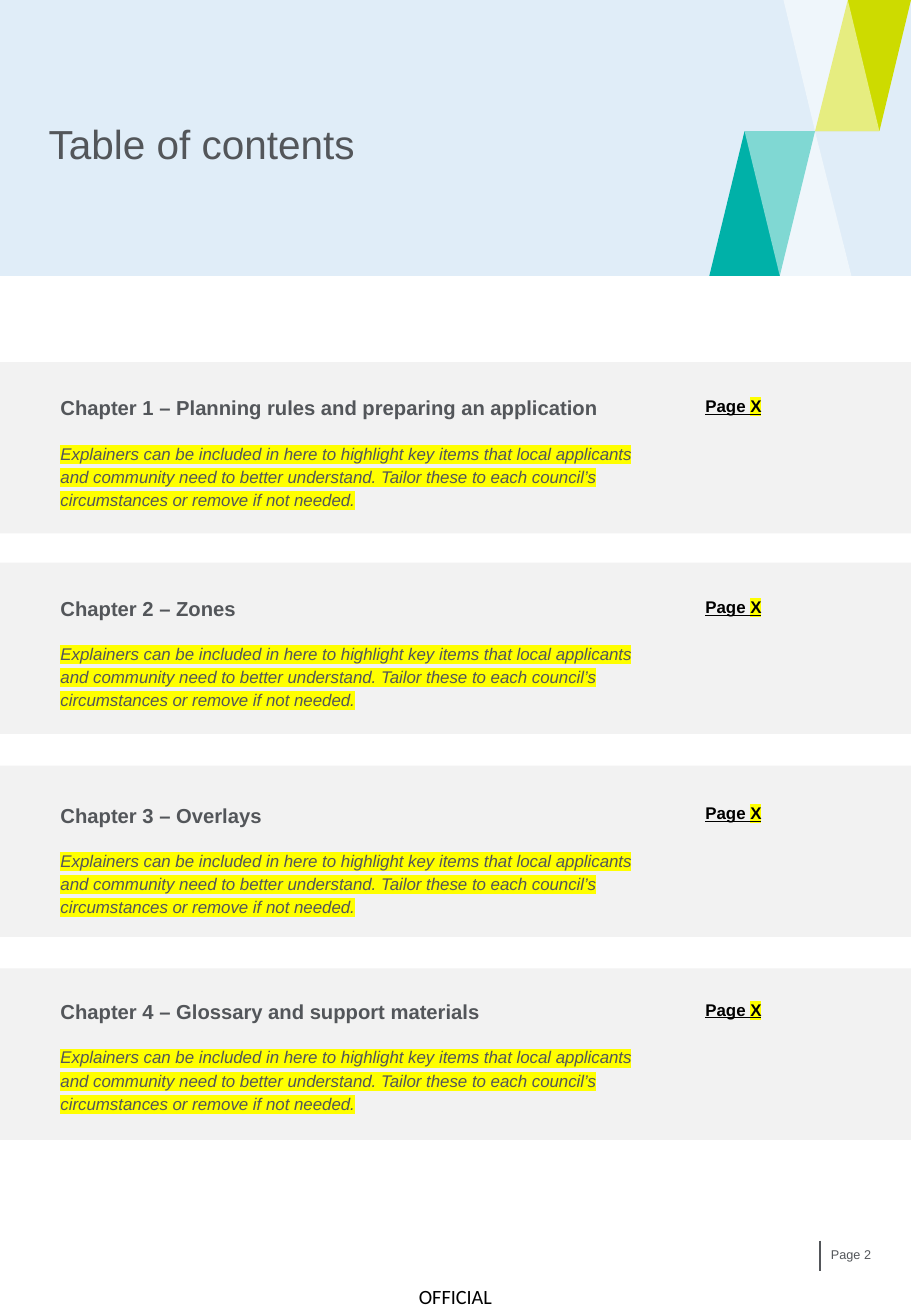
from lxml import etree
from pptx import Presentation
from pptx.dml.color import RGBColor
from pptx.enum.shapes import MSO_CONNECTOR, MSO_SHAPE
from pptx.enum.text import MSO_ANCHOR, PP_ALIGN
from pptx.oxml.ns import qn
from pptx.util import Pt

PX = 9144
STRAIGHT = MSO_CONNECTOR.STRAIGHT
RECTANGLE = MSO_SHAPE.RECTANGLE
TOP, MIDDLE = MSO_ANCHOR.TOP, MSO_ANCHOR.MIDDLE
LEFT, CENTER = PP_ALIGN.LEFT, PP_ALIGN.CENTER

SKY = RGBColor(0xE0, 0xED, 0xF8)
TEAL = RGBColor(0x00, 0xB1, 0xA8)
LIME = RGBColor(0xCD, 0xDB, 0x00)
WHITE = RGBColor(0xFF, 0xFF, 0xFF)
GREY = RGBColor(0xF2, 0xF2, 0xF2)
SLATE = RGBColor(0x53, 0x56, 0x5A)
BLACK = RGBColor(0x00, 0x00, 0x00)
YELLOW = RGBColor(0xFF, 0xFF, 0x00)

EXPLAINER = (
    "Explainers can be included in here to highlight key items that local "
    "applicants and community need to better understand. Tailor these to each "
    "council’s circumstances or remove if not needed."
)
CHAPTERS = [
    ("Chapter 1 – Planning rules and preparing an application", 298, 318, 318, 87),
    ("Chapter 2 – Zones", 463, 483, 484, 87),
    ("Chapter 3 – Overlays", 630, 653, 653, 123),
    ("Chapter 4 – Glossary and support materials", 797, 815, 815, 87),
]
FACETS = [
    ([(613, 108), (584, 227), (642, 227), (671, 108)], TEAL, None),
    ([(724, 108), (750, 0), (698, 0), (671, 108)], LIME, None),
    ([(724, 108), (698, 0), (645, 0), (671, 108)], WHITE, 50),
    ([(613, 108), (642, 227), (701, 227), (671, 108)], WHITE, 50),
]


class ContentsPage:
    """Draws the parts of a contents page in one shared style."""

    def __init__(self, slide, font="Arial"):
        self.shapes = slide.shapes
        self.font = font

    def paint(self, shape, color, opacity=None):
        shape.shadow.inherit = False
        shape.line.fill.background()
        shape.fill.solid()
        shape.fill.fore_color.rgb = color
        if opacity is not None:
            tone = shape._element.spPr.find(qn("a:solidFill"))[0]
            etree.SubElement(tone, qn("a:alpha")).set("val", str(opacity * 1000))

    def band(self, top, height, color):
        shape = self.shapes.add_shape(RECTANGLE, 0, top * PX, 750 * PX, height * PX)
        self.paint(shape, color)

    def facet(self, points, color, opacity):
        builder = self.shapes.build_freeform(*points[0], scale=PX)
        builder.add_line_segments(points[1:], close=True)
        self.paint(builder.convert_to_shape(), color, opacity)

    def rule(self, left, top, bottom, color):
        line = self.shapes.add_connector(
            STRAIGHT, left * PX, top * PX, left * PX, bottom * PX)
        line.line.color.rgb = color
        line.line.width = Pt(1)
        etree.SubElement(line._element.spPr, qn("a:effectLst"))

    def box(self, left, top, width, height, anchor=TOP, inset=(10, 5)):
        box = self.shapes.add_textbox(left * PX, top * PX, width * PX, height * PX)
        frame = box.text_frame
        frame.word_wrap = True
        frame.vertical_anchor = anchor
        frame.margin_left = frame.margin_right = inset[0] * PX
        frame.margin_top = frame.margin_bottom = inset[1] * PX
        return frame

    def style(self, span, size, color=SLATE, font=None, bold=False, italic=False,
              underline=False, highlight=None):
        span.font.size = Pt(size)
        span.font.name = font or self.font
        span.font.color.rgb = color
        span.font.bold = bold
        span.font.italic = italic
        span.font.underline = underline
        if highlight is not None:
            props = span._r.get_or_add_rPr()
            marker = etree.SubElement(props, qn("a:highlight"))
            etree.SubElement(marker, qn("a:srgbClr")).set("val", str(highlight))
            props.find(qn("a:latin")).addprevious(marker)

    def label(self, text, place, size, align=LEFT, **look):
        frame = self.box(*place, anchor=MIDDLE, inset=(0, 0))
        frame.text = text
        para = frame.paragraphs[0]
        para.alignment = align
        self.style(para.runs[0], size, **look)

    def chapter(self, title, band_top, text_top, page_top, text_height):
        self.band(band_top, 141, GREY)
        frame = self.box(40, text_top, 507, text_height)
        frame.text = f"{title}\n{EXPLAINER}"
        heading, explainer = frame.paragraphs
        for para in (heading, explainer):
            para.line_spacing = 1.14
            para.space_after = Pt(6)
        explainer.space_before = Pt(6)
        self.style(heading.runs[0], 12, bold=True)
        self.style(explainer.runs[0], 10, italic=True, highlight=YELLOW)
        self.page_reference(page_top)

    def page_reference(self, top):
        para = self.box(571, top, 87, 28).paragraphs[0]
        para.line_spacing = 1.14
        for text, highlight in (("Page ", None), ("X", YELLOW)):
            span = para.add_run()
            span.text = text
            self.style(span, 10, BLACK, bold=True, underline=True, highlight=highlight)


def main():
    deck = Presentation()
    deck.slide_width, deck.slide_height = 750 * PX, 1083 * PX
    page = ContentsPage(deck.slides.add_slide(deck.slide_layouts[6]))

    page.band(0, 227, SKY)
    for points, color, opacity in FACETS:
        page.facet(points, color, opacity)
    page.rule(675, 1021, 1046, SLATE)
    page.label("OFFICIAL", (328, 1051, 94, 32), 12, CENTER, color=BLACK, font="Calibri")
    page.label("Table of contents", (40, 61, 531, 114), 24)
    page.label("Page 2", (684, 1004, 44, 57), 7.5)
    for chapter in CHAPTERS:
        page.chapter(*chapter)
    deck.save("out.pptx")


if __name__ == "__main__":
    main()
